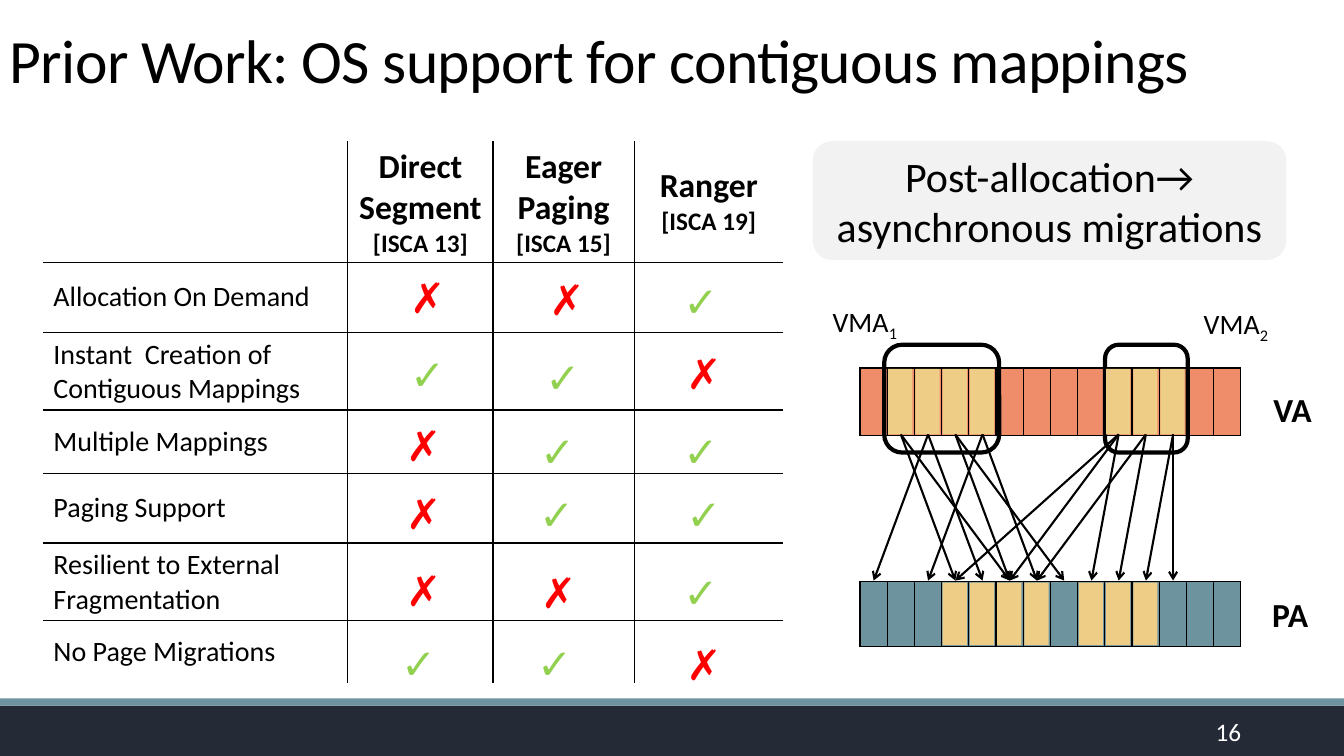
"""Builds the slide comparing prior OS support for contiguous mappings."""
import pptx
import pptx.util
import pptx.dml.color
import pptx.enum.shapes
import pptx.enum.text
import pptx.oxml.ns
from lxml import etree
from dataclasses import dataclass

Inches = pptx.util.Inches
SHAPES = pptx.enum.shapes.MSO_SHAPE
ALIGN = pptx.enum.text.PP_ALIGN
ANCHOR = pptx.enum.text.MSO_ANCHOR
qn = pptx.oxml.ns.qn


@dataclass(frozen=True)
class Theme:
    """Colours, font and type sizes."""
    font: str = "Calibri"
    ink: str = "000000"
    white: str = "FFFFFF"
    navy: str = "242B37"
    teal: str = "6D939E"
    coral: str = "EF8C6A"
    sand: str = "EECD86"
    panel: str = "F2F2F2"
    yes: str = "92D050"
    no: str = "FF0000"
    title: int = 44
    large: int = 30
    heading: int = 24
    body: int = 20
    small: int = 18


THEME = Theme()
PLAIN_TABLE = "{2D5ABB26-0587-4C30-8999-92F81FD0307C}"

TITLE = "Prior Work: OS support for contiguous mappings"
PAGE_NUMBER = "16"
CALLOUT = "Post-allocation→\nasynchronous migrations"
HEADERS = [
    [[("Direct", THEME.heading)], [("Segment", THEME.heading)], [("[ISCA 13]", THEME.small)]],
    [[("Eager Paging\n", THEME.heading), ("[ISCA 15]", THEME.small)]],
    [[("Ranger\n", THEME.heading), ("[ISCA 19]", THEME.small)]],
]
FEATURES = [
    "Allocation On Demand",
    "Instant  Creation of Contiguous Mappings",
    "Multiple Mappings",
    "Paging Support",
    "Resilient to External Fragmentation",
    "No Page Migrations",
]
COLUMN_WIDTHS = [3.02, 1.44, 1.4, 1.48]
ROW_HEIGHTS = [0.95, 0.7, 0.7, 0.63, 0.69, 0.62, 0.62]
MARKS = [
    [("✗", 3.97, 2.64), ("✗", 5.35, 2.66), ("✓", 6.68, 2.68)],
    [("✓", 3.97, 3.41), ("✓", 5.31, 3.44), ("✗", 6.71, 3.4)],
    [("✗", 3.93, 4.11), ("✓", 5.26, 4.17), ("✓", 6.68, 4.17)],
    [("✗", 3.93, 4.79), ("✓", 5.25, 4.8), ("✓", 6.71, 4.8)],
    [("✗", 3.93, 5.55), ("✗", 5.27, 5.57), ("✓", 6.68, 5.57)],
    [("✓", 3.88, 6.28), ("✓", 5.23, 6.28), ("✗", 6.71, 6.29)],
]
MARK_STYLE = {"✓": (0.53, THEME.yes), "✗": (0.47, THEME.no)}

MEMORY_LEFT, CELL, CELL_COUNT = 8.53, 0.27, 14
VIRTUAL = {"top": 3.65, "height": 0.67, "fill": THEME.coral, "used": [1, 2, 3, 4, 9, 10, 11]}
PHYSICAL = {"top": 5.77, "height": 0.64, "fill": THEME.teal, "used": [3, 4, 5, 6, 8, 9, 10]}
MEMORY_LABELS = [("VA", 12.53, 3.81, 0.59), ("PA", 12.52, 5.84, 0.56)]
AREAS = [("1", 8.16, 2.97, 8.77, 1.14), ("2", 11.84, 2.99, 10.96, 0.82)]
MAPPINGS = [
    (1, 3), (1, 5), (2, 0), (2, 4), (3, 5), (3, 7), (4, 2), (4, 6),
    (9, 3), (9, 5), (9, 8), (10, 6), (10, 9), (11, 10), (11, 11),
]


def rgb(value):
    return pptx.dml.color.RGBColor.from_string(value)


def write(frame, paragraphs, color=THEME.ink, bold=False, align=ALIGN.LEFT):
    for index, runs in enumerate(paragraphs):
        para = frame.paragraphs[0] if index == 0 else frame.add_paragraph()
        para.alignment = align
        for text, size in runs:
            for number, line in enumerate(text.split("\n")):
                if number:
                    para.add_line_break()
                if not line:
                    continue
                span = para.add_run()
                span.text = line
                span.font.name = THEME.font
                span.font.size = pptx.util.Pt(size)
                span.font.bold = bold
                span.font.color.rgb = rgb(color)


def add_box(page, bounds, paragraphs, anchor=ANCHOR.TOP, wrap=True, **style):
    box = page.shapes.add_textbox(*map(Inches, bounds))
    frame = box.text_frame
    frame.word_wrap = wrap
    frame.vertical_anchor = anchor
    if not wrap:
        frame.auto_size = pptx.enum.text.MSO_AUTO_SIZE.SHAPE_TO_FIT_TEXT
    write(frame, paragraphs, **style)
    return frame.paragraphs[0]


def add_block(page, bounds, fill=None, kind=SHAPES.RECTANGLE, weight=None):
    block = page.shapes.add_shape(kind, *map(Inches, bounds))
    block.shadow.inherit = False
    if fill:
        block.fill.solid()
        block.fill.fore_color.rgb = rgb(fill)
    else:
        block.fill.background()
    if weight:
        block.line.color.rgb = rgb(THEME.ink)
        block.line.width = pptx.util.Pt(weight)
    else:
        block.line.fill.background()
    return block


def add_grid(page, left, top, widths, heights):
    bounds = map(Inches, (left, top, sum(widths), sum(heights)))
    table = page.shapes.add_table(len(heights), len(widths), *bounds).table
    table.first_row = table.horz_banding = False
    table._tbl.tblPr.find(qn("a:tableStyleId")).text = PLAIN_TABLE
    for column, width in zip(table.columns, widths):
        column.width = Inches(width)
    for row, height in zip(table.rows, heights):
        row.height = Inches(height)
    return table


def style_cell(cell, sides, fill=None):
    properties = cell._tc.get_or_add_tcPr()
    for side in sides:
        line = etree.SubElement(properties, qn("a:ln" + side), w="12700")
        paint = etree.SubElement(line, qn("a:solidFill"))
        etree.SubElement(paint, qn("a:srgbClr"), val=THEME.ink)
    if fill:
        cell.fill.solid()
        cell.fill.fore_color.rgb = rgb(fill)
    else:
        cell.fill.background()


def add_comparison(page):
    table = add_grid(page, 0.43, 1.4, COLUMN_WIDTHS, ROW_HEIGHTS)
    last_row, last_column = len(ROW_HEIGHTS) - 1, len(COLUMN_WIDTHS) - 1
    for row in range(last_row + 1):
        for column in range(last_column + 1):
            inner = {"L": column > 0, "R": column < last_column, "T": row > 0, "B": row < last_row}
            cell = table.cell(row, column)
            style_cell(cell, [side for side, shown in inner.items() if shown])
            cell.vertical_anchor = ANCHOR.MIDDLE
    for column, header in enumerate(HEADERS, 1):
        write(table.cell(0, column).text_frame, header, bold=True, align=ALIGN.CENTER)
    for row, feature in enumerate(FEATURES, 1):
        write(table.cell(row, 0).text_frame, [[(feature, THEME.body)]])
    for marks in MARKS:
        for sign, left, top in marks:
            width, color = MARK_STYLE[sign]
            add_box(page, (left, top, width, 0.61), [[(sign, THEME.large)]], wrap=False, color=color)


def add_arrow(page, start, end):
    points = map(Inches, (*start, *end))
    arrow = page.shapes.add_connector(pptx.enum.shapes.MSO_CONNECTOR.STRAIGHT, *points)
    arrow.line.color.rgb = rgb(THEME.ink)
    arrow.line.width = pptx.util.Pt(1.5)
    etree.SubElement(arrow.line._get_or_add_ln(), qn("a:tailEnd"), type="arrow")
    etree.SubElement(arrow._element.spPr, qn("a:effectLst"))


def add_memory(page):
    for memory in (VIRTUAL, PHYSICAL):
        table = add_grid(page, MEMORY_LEFT, memory["top"], [CELL] * CELL_COUNT, [memory["height"]])
        for column in range(CELL_COUNT):
            style_cell(table.cell(0, column), "LRTB", memory["fill"])
    for number, label_left, label_top, left, width in AREAS:
        add_block(page, (left, 3.42, width, 1.07), kind=SHAPES.ROUNDED_RECTANGLE, weight=3)
        name = [[("VMA", THEME.body), (number, THEME.body)]]
        para = add_box(page, (label_left, label_top, 0.86, 0.44), name, wrap=False)
        para.runs[1].font._element.set("baseline", "-25000")
    for memory in (VIRTUAL, PHYSICAL):
        for column in memory["used"]:
            left = MEMORY_LEFT + column * CELL + 0.01
            add_block(page, (left, memory["top"] + 0.01, 0.24, memory["height"] - 0.02), THEME.sand)
    middle = MEMORY_LEFT + CELL / 2
    for source, target in MAPPINGS:
        add_arrow(page, (middle + source * CELL, 4.31), (middle + target * CELL, 5.76))
    for label, left, top, width in MEMORY_LABELS:
        add_box(page, (left, top, width, 0.5), [[(label, THEME.heading)]], wrap=False, bold=True)


def main():
    deck = pptx.Presentation()
    deck.slide_width, deck.slide_height = Inches(13.33), Inches(7.5)
    page = deck.slides.add_slide(deck.slide_layouts[6])
    add_block(page, (0, 7, 13.33, 0.5), THEME.navy)
    add_block(page, (0, 6.93, 13.33, 0.07), THEME.teal)
    title = add_box(page, (0, 0.01, 13.33, 0.99), [[(TITLE, THEME.title)]], ANCHOR.BOTTOM)
    title.line_spacing = 0.85
    title.runs[0].font._element.set("spc", "-50")
    add_comparison(page)
    callout = add_block(page, (8.06, 1.4, 4.7, 1.18), THEME.panel, SHAPES.ROUNDED_RECTANGLE)
    callout.text_frame.word_wrap = True
    callout.text_frame.vertical_anchor = ANCHOR.MIDDLE
    write(callout.text_frame, [[(CALLOUT, THEME.large)]], align=ALIGN.CENTER)
    add_memory(page)
    add_box(page, (10.98, 7.06, 1.43, 0.4), [[(PAGE_NUMBER, THEME.small)]], ANCHOR.MIDDLE,
            color=THEME.white, align=ALIGN.RIGHT)
    deck.save("out.pptx")


if __name__ == "__main__":
    main()
